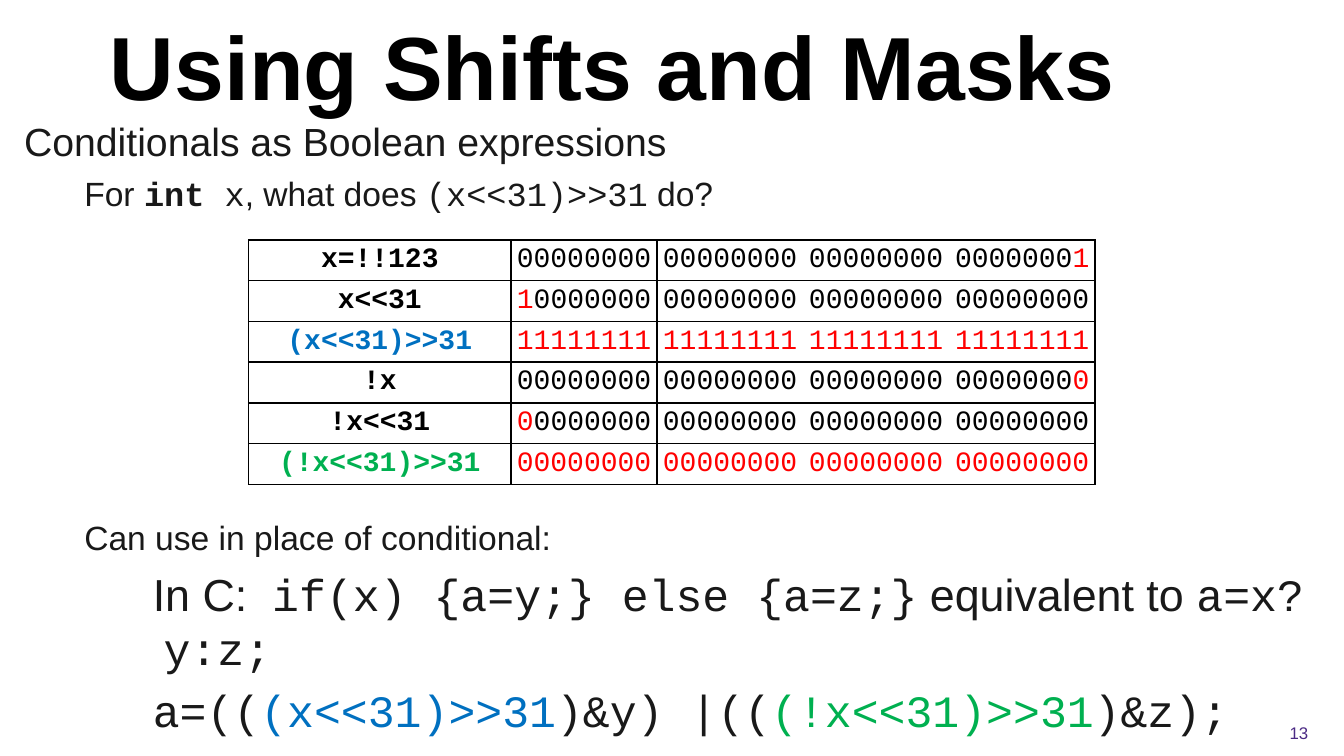
from pptx import Presentation
from pptx.dml.color import RGBColor
from pptx.enum.text import MSO_ANCHOR, PP_ALIGN
from pptx.oxml import parse_xml
from pptx.oxml.ns import nsdecls
from pptx.util import Pt

COLOURS = {"black": "000000", "text": "191919", "red": "FF0000",
           "blue": "0070C0", "green": "00B050", "purple": "4B2A85"}
SANS, MONO = "Arial", "Courier New"

# Label, its colour, 32 bits, and the range of bits shown in red
BIT_ROWS = [
    ("x=!!123", "black", "0" * 31 + "1", (31, 32)),
    ("x<<31", "black", "1" + "0" * 31, (0, 1)),
    ("(x<<31)>>31", "blue", "1" * 32, (0, 32)),
    ("!x", "black", "0" * 32, (31, 32)),
    ("!x<<31", "black", "0" * 32, (0, 1)),
    ("(!x<<31)>>31", "green", "0" * 32, (0, 32)),
]

# Left margin, first-line indent, space before, size, spans
BODY = [
    (27.4, -12.2, 6, 21, [("Conditionals as Boolean expressions", SANS)]),
    (58.3, -10.8, 4.8, 18, [("For ", SANS), ("int", MONO, "text", True),
                            (" x", MONO), (", what does ", SANS),
                            ("(x<<31)>>31", MONO), (" do?", SANS)]),
    # The wide space before leaves room for the table
    (58.3, -10.8, 163, 18, [("Can use in place of conditional:", SANS)]),
    (90, -5.8, 4.8, 24, [("In C:  ", SANS),
                         ("if(x) {a=y;} else {a=z;}", MONO),
                         (" equivalent to ", SANS), ("a=x?y:z;", MONO)]),
    (90, -5.8, 4.8, 24, [("a=((", MONO), ("(x<<31)>>31", MONO, "blue"),
                         (")&y) |((", MONO),
                         ("(!x<<31)>>31", MONO, "green"), (")&z);", MONO)]),
]


def add_span(para, text, font, size, colour="text", bold=False):
    span = para.add_run()
    span.text = text
    span.font.name = font
    span.font.size = Pt(size)
    span.font.bold = bold
    span.font.color.rgb = RGBColor.from_string(COLOURS[colour])


def indent(para, margin, first_line):
    properties = para._p.get_or_add_pPr()
    properties.set("marL", str(Pt(margin)))
    properties.set("indent", str(Pt(first_line)))


def add_text_frame(page, box, inset):
    frame = page.shapes.add_textbox(*map(Pt, box)).text_frame
    frame.word_wrap = True
    frame.margin_left = frame.margin_right = Pt(inset)
    frame.margin_top = frame.margin_bottom = Pt(inset)
    return frame


def add_title(page, box):
    frame = add_text_frame(page, box, 7.2)
    frame.vertical_anchor = MSO_ANCHOR.BOTTOM
    para = frame.paragraphs[0]
    indent(para, 0, 23.8)
    add_span(para, "Using Shifts and Masks", SANS, 48, "black", True)


def add_body(page, box):
    frame = add_text_frame(page, box, 7.2)
    for index, (margin, first_line, before, size, spans) in enumerate(BODY):
        para = frame.add_paragraph() if index else frame.paragraphs[0]
        indent(para, margin, first_line)
        para.space_before = Pt(before)
        for text, font, *style in spans:
            add_span(para, text, font, size, *style)


def add_page_number(page, box):
    para = add_text_frame(page, box, 3.6).paragraphs[0]
    para.alignment = PP_ALIGN.CENTER
    add_span(para, "13", SANS, 9, "purple")


def set_borders(cell, visible):
    properties = cell._tc.get_or_add_tcPr()
    for side in "LRTB":
        paint = (f'<a:solidFill><a:srgbClr val="{COLOURS["black"]}"/></a:solidFill>'
                 if side in visible else "<a:noFill/>")
        properties.append(parse_xml(
            f'<a:ln{side} {nsdecls("a")} w="{Pt(1)}">{paint}</a:ln{side}>'))


def format_cell(cell, side_inset, visible, spans):
    set_borders(cell, visible)
    cell.fill.background()
    cell.vertical_anchor = MSO_ANCHOR.MIDDLE
    cell.margin_left = cell.margin_right = Pt(side_inset)
    cell.margin_top = cell.margin_bottom = 0
    para = cell.text_frame.paragraphs[0]
    para.alignment = PP_ALIGN.CENTER
    for text, colour, bold in spans:
        if text:
            add_span(para, text, MONO, 15, colour, bold)


def add_bit_table(page, box):
    left, top, width, height = box
    label_width = 140.6
    table = page.shapes.add_table(len(BIT_ROWS), 5, *map(Pt, box)).table
    table.first_row = table.horz_banding = False
    for index, column in enumerate(table.columns):
        column.width = Pt((width - label_width) / 4 if index else label_width)
    for row in table.rows:
        row.height = Pt(height / len(BIT_ROWS))

    # Vertical rules frame the labels, the first byte and the table's right edge
    byte_borders = ["LRTB", "LTB", "TB", "RTB"]
    for row, (label, colour, bits, (start, stop)) in enumerate(BIT_ROWS):
        format_cell(table.cell(row, 0), 5, "LRTB", [(label, colour, True)])
        for byte, visible in enumerate(byte_borders):
            first = 8 * byte
            digits = bits[first:first + 8]
            low, high = (min(max(edge - first, 0), 8) for edge in (start, stop))
            format_cell(table.cell(row, byte + 1), 0, visible,
                        [(digits[:low], "black", False),
                         (digits[low:high], "red", False),
                         (digits[high:], "black", False)])


def main():
    deck = Presentation()
    deck.slide_width, deck.slide_height = Pt(720), Pt(405)
    page = deck.slides.add_slide(deck.slide_layouts[6])
    add_title(page, (28, 26, 662, 44.6))
    add_body(page, (-9.4, 55.4, 760.3, 293.8))
    add_page_number(page, (671.8, 383.8, 48.2, 21.6))
    add_bit_table(page, (133.2, 128.5, 453.6, 131))
    deck.save("out.pptx")


if __name__ == "__main__":
    main()
